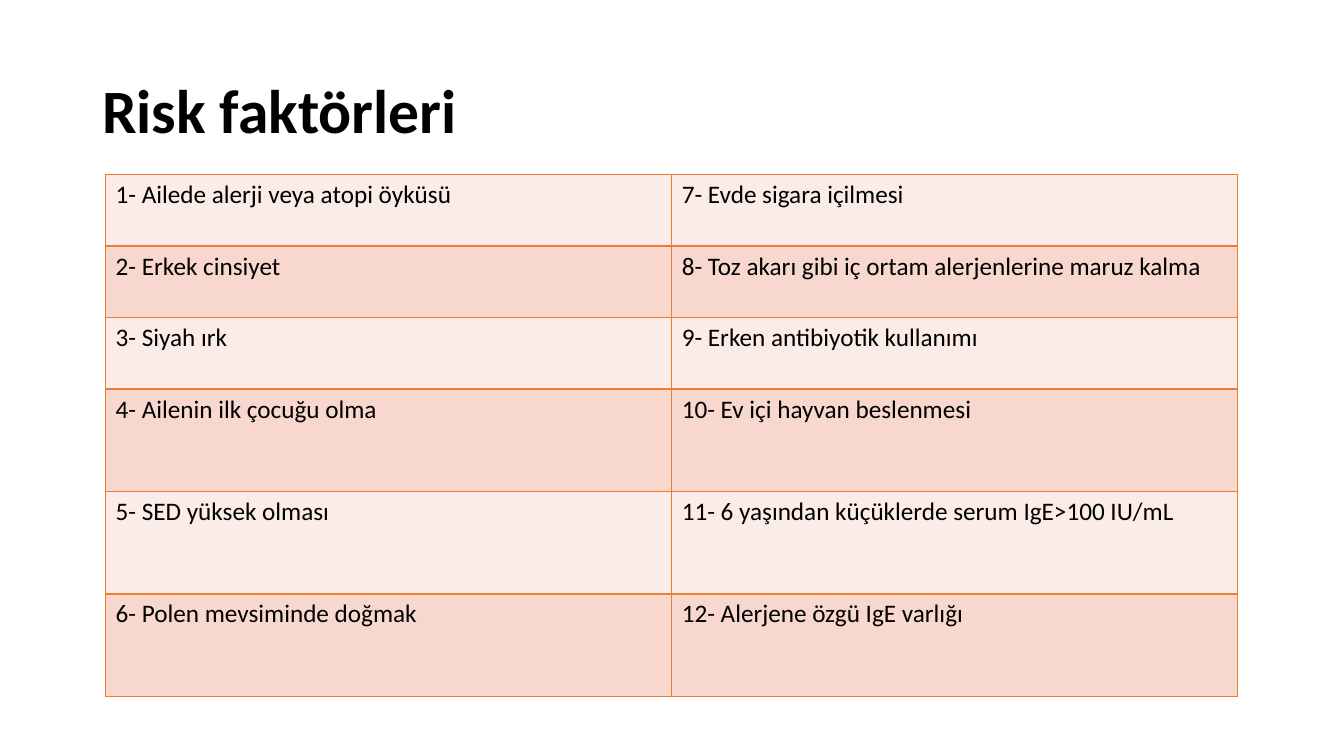
from dataclasses import dataclass

from lxml import etree
from pptx import Presentation
from pptx.dml.color import RGBColor
from pptx.enum.text import MSO_ANCHOR
from pptx.oxml.ns import qn
from pptx.util import Pt

MIDDLE = MSO_ANCHOR.MIDDLE
FONT = "Calibri"
COLORS = {
    "text": "000000",
    "border": "ED7D31",
    "light_band": "FCECE8",
    "dark_band": "F8D7CE",
}
BORDER_WIDTH = Pt(1)
COLUMN_WIDTH = 404.4


@dataclass
class RiskRow:
    left: str
    right: str
    height: float


RISK_ROWS = [
    RiskRow("1- Ailede alerji veya atopi öyküsü", "7- Evde sigara içilmesi", 51.1),
    RiskRow("2- Erkek cinsiyet", "8- Toz akarı gibi iç ortam alerjenlerine maruz kalma", 51.1),
    RiskRow("3- Siyah ırk", "9- Erken antibiyotik kullanımı", 51.1),
    RiskRow("4- Ailenin ilk çocuğu olma", "10- Ev içi hayvan beslenmesi", 73.2),
    RiskRow("5- SED yüksek olması", "11- 6 yaşından küçüklerde serum IgE>100 IU/mL", 73.2),
    RiskRow("6- Polen mevsiminde doğmak", "12- Alerjene özgü IgE varlığı", 73.2),
]


def style_font(paragraph, size: float, bold: bool = False) -> None:
    font = paragraph.font
    font.name = FONT
    font.size = Pt(size)
    font.bold = bold
    font.color.rgb = RGBColor.from_string(COLORS["text"])


def add_borders(cell) -> None:
    # Border lines must precede the fill in the cell properties
    properties = cell._tc.get_or_add_tcPr()
    for index, side in enumerate(("lnL", "lnR", "lnT", "lnB")):
        line = etree.Element(qn(f"a:{side}"), w=str(BORDER_WIDTH))
        fill = etree.SubElement(line, qn("a:solidFill"))
        etree.SubElement(fill, qn("a:srgbClr"), val=COLORS["border"])
        properties.insert(index, line)


def add_title(slide, text: str) -> None:
    box = slide.shapes.add_textbox(Pt(66), Pt(28.75), Pt(828), Pt(104.4))
    frame = box.text_frame
    frame.word_wrap = True
    frame.vertical_anchor = MIDDLE
    paragraph = frame.paragraphs[0]
    paragraph.text = text
    paragraph.line_spacing = 0.9
    style_font(paragraph, 44, bold=True)


def add_risk_table(slide, rows: list[RiskRow]) -> None:
    height = sum(row.height for row in rows)
    table = slide.shapes.add_table(
        len(rows), 2, Pt(75.4), Pt(124.6), Pt(2 * COLUMN_WIDTH), Pt(height)
    ).table
    table.first_row = False
    for column in table.columns:
        column.width = Pt(COLUMN_WIDTH)
    for row_index, row in enumerate(rows):
        table.rows[row_index].height = Pt(row.height)
        band = "dark_band" if row_index % 2 else "light_band"
        for column_index, text in enumerate((row.left, row.right)):
            cell = table.cell(row_index, column_index)
            cell.text = text
            style_font(cell.text_frame.paragraphs[0], 18)
            cell.fill.solid()
            cell.fill.fore_color.rgb = RGBColor.from_string(COLORS[band])
            add_borders(cell)


def main() -> None:
    presentation = Presentation()
    presentation.slide_width = Pt(960)
    presentation.slide_height = Pt(540)
    slide = presentation.slides.add_slide(presentation.slide_layouts[6])
    add_title(slide, "Risk faktörleri")
    add_risk_table(slide, RISK_ROWS)
    presentation.save("out.pptx")


if __name__ == "__main__":
    main()
